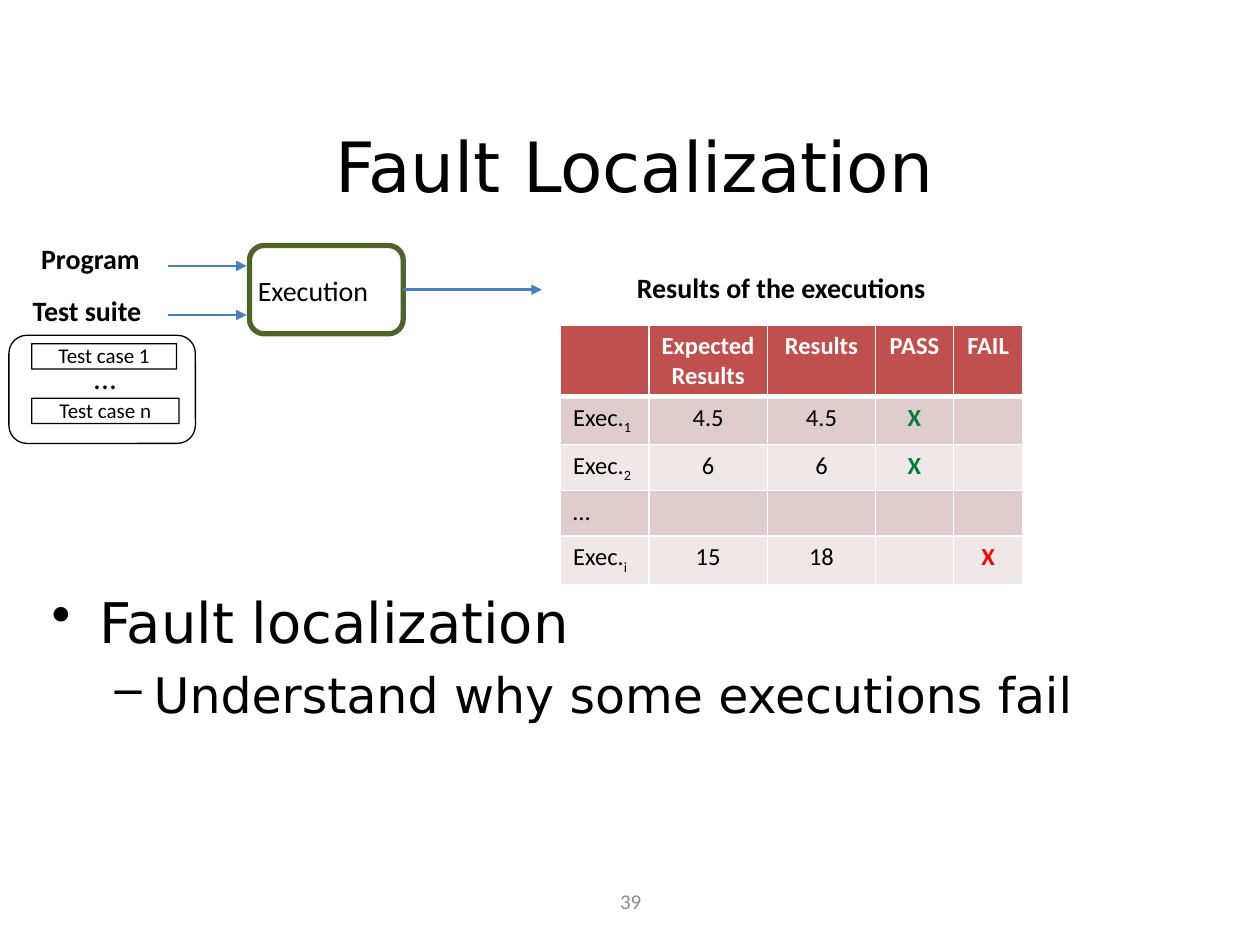
"""Build the fault localization slide."""
from dataclasses import dataclass

from lxml import etree
from pptx import Presentation
from pptx.dml.color import RGBColor
from pptx.enum.shapes import MSO_CONNECTOR, MSO_SHAPE
from pptx.enum.text import MSO_ANCHOR, PP_ALIGN
from pptx.oxml.ns import qn
from pptx.util import Cm, Pt

LEFT, CENTER = PP_ALIGN.LEFT, PP_ALIGN.CENTER
TOP, MIDDLE = MSO_ANCHOR.TOP, MSO_ANCHOR.MIDDLE
ROUNDED, STRAIGHT = MSO_SHAPE.ROUNDED_RECTANGLE, MSO_CONNECTOR.STRAIGHT
RIGHT_SIDE = 3


@dataclass(frozen=True)
class Theme:
    body_font: str = "Calibri"
    head_font: str = "DejaVu Sans"
    black: str = "000000"
    white: str = "FFFFFF"
    grey: str = "8C8C8C"
    blue: str = "4B7EBC"
    olive: str = "4F6228"
    header: str = "C0504D"
    bands: tuple = ("DFCDCE", "F0E8E8")
    passed: str = "007E39"
    failed: str = "FF0000"
    title: float = 39.6
    bullets: tuple = (32, 28)
    dots: float = 18
    label: float = 16
    cell: float = 14
    small: float = 12


class Deck:
    def __init__(self, theme):
        self.t = theme
        self.prs = Presentation()
        self.prs.slide_width, self.prs.slide_height = Cm(25.4), Cm(19.05)
        self.s = self.prs.slides.add_slide(self.prs.slide_layouts[6])

    def run(self, p, text, size, color=None, bold=False, font=None):
        r = p.add_run()
        r.text = text
        r.font.size, r.font.bold = Pt(size), bold
        r.font.name = font or self.t.body_font
        r.font.color.rgb = RGBColor.from_string(color or self.t.black)
        return r

    def text(self, box, text, size, align=LEFT, anchor=TOP, wrap=True,
             spacing=None, **style):
        sp = self.s.shapes.add_textbox(*map(Cm, box))
        tf = sp.text_frame
        tf.word_wrap, tf.vertical_anchor = wrap, anchor
        p = tf.paragraphs[0]
        p.alignment, p.line_spacing = align, spacing
        self.run(p, text, size, **style)

    def label(self, box, text, size=None, align=LEFT, bold=True):
        self.text(box, text, size or self.t.label, align, wrap=False,
                  spacing=0.98, bold=bold)

    def frame(self, box, color, width, text=None, rounding=None):
        sp = self.s.shapes.add_shape(ROUNDED, *map(Cm, box))
        sp.shadow.inherit = False
        sp.fill.background()
        sp.line.color.rgb = RGBColor.from_string(color)
        sp.line.width = Pt(width)
        if rounding is not None:
            sp.adjustments[0] = rounding
        if text:
            tf = sp.text_frame
            tf.word_wrap, tf.vertical_anchor = True, MIDDLE
            p = tf.paragraphs[0]
            p.alignment, p.line_spacing = CENTER, 0.98
            self.run(p, text, self.t.small)
        return sp

    def arrow(self, x1, x2, y, source=None):
        c = self.s.shapes.add_connector(STRAIGHT, Cm(x1), Cm(y), Cm(x2), Cm(y))
        if source is not None:
            c.begin_connect(source, RIGHT_SIDE)
        c.line.color.rgb = RGBColor.from_string(self.t.blue)
        c.line.width = Pt(1.5)
        etree.SubElement(c.line._get_or_add_ln(), qn("a:tailEnd"), type="triangle")
        etree.SubElement(c._element.spPr, qn("a:effectLst"))

    def borders(self, cell, top, bottom):
        tcPr = cell._tc.get_or_add_tcPr()
        for side, width in (("L", 1), ("R", 1), ("T", top), ("B", bottom)):
            ln = etree.SubElement(tcPr, qn(f"a:ln{side}"), w=str(Pt(width)))
            fill = etree.SubElement(ln, qn("a:solidFill"))
            etree.SubElement(fill, qn("a:srgbClr"), val=self.t.white)

    def table(self, left, top, widths, heights, rows):
        t = self.t
        frame = self.s.shapes.add_table(len(rows), len(widths), Cm(left), Cm(top),
                                        Cm(sum(widths)), Cm(sum(heights)))
        tbl = frame.table
        for col, width in zip(tbl.columns, widths):
            col.width = Cm(width)
        for i, (row, height) in enumerate(zip(rows, heights)):
            tbl.rows[i].height = Cm(height)
            for j, value in enumerate(row):
                cell = tbl.cell(i, j)
                self.borders(cell, 3 if i == 1 else 1, 3 if i == 0 else 1)
                cell.fill.solid()
                fill = t.bands[(i - 1) % 2] if i else t.header
                cell.fill.fore_color.rgb = RGBColor.from_string(fill)
                if not value:
                    cell.margin_top = cell.margin_bottom = 0
                    continue
                p = cell.text_frame.paragraphs[0]
                p.alignment = CENTER if i == 0 or j else LEFT
                color = t.white if i == 0 else t.black
                if value == "X":
                    color = t.passed if j == 3 else t.failed
                base, _, sub = value.partition("_")
                self.run(p, base, t.cell, color, i == 0 or value == "X")
                if sub:
                    r = self.run(p, sub, t.cell, color)
                    r.font._element.set("baseline", "-25000")

    def bullets(self, box, items):
        tf = self.s.shapes.add_textbox(*map(Cm, box)).text_frame
        tf.word_wrap = True
        for i, (text, mark, margin, hang) in enumerate(items):
            p = tf.add_paragraph() if i else tf.paragraphs[0]
            size = self.t.bullets[i]
            p.level, p.space_before = i, Pt(size * 0.2)
            pPr = p._p.get_or_add_pPr()
            pPr.set("marL", str(Cm(margin)))
            pPr.set("indent", str(-Cm(hang)))
            etree.SubElement(pPr, qn("a:buChar"), char=mark)
            self.run(p, text, size, font=self.t.head_font)


def main():
    t = Theme()
    d = Deck(t)
    d.text((0.79, 2.62, 24, 1.4), "Fault Localization", t.title, CENTER, MIDDLE,
           font=t.head_font)
    d.text((8.69, 17.65, 8.05, 1.02), "39", t.small, CENTER, MIDDLE, color=t.grey)

    d.label((0.58, 4.78, 2.67, 0.91), "Program")
    d.label((0.41, 5.82, 2.87, 0.91), "Test suite")
    d.frame((0.18, 6.76, 3.76, 2.18), t.black, 0.75)
    for name, top, width in (("1", 6.93, 2.92), ("n", 8.03, 2.97)):
        d.frame((0.64, top, width, 0.51), t.black, 0.75, f"Test case {name}", 0.009)
    d.label((1.63, 7.14, 1.09, 0.99), "...", t.dots, bold=False)

    execution = d.frame((5.03, 4.95, 3.1, 1.78), t.olive, 3)
    d.text((4.95, 5.38, 3.38, 0.94), "Execution", t.label)
    for y in (5.36, 6.35):
        d.arrow(3.38, 4.97, y)
    d.arrow(8.13, 10.92, 5.84, execution)

    d.label((12.04, 5.36, 7.42, 0.91), "Results of the executions", align=CENTER)
    d.table(11.3, 6.55, (1.78, 2.39, 2.18, 1.57, 1.4), (1.42, 0.97, 0.92, 0.92, 0.97), (
        ("", "Expected Results", "Results", "PASS", "FAIL"),
        ("Exec._1", "4.5", "4.5", "X", ""),
        ("Exec._2", "6", "6", "X", ""),
        ("…", "", "", "", ""),
        ("Exec._i", "15", "18", "", "X"),
    ))
    d.bullets((0.79, 11.71, 24, 4.95), (
        ("Fault localization", "•", 0.97, 0.97),
        ("Understand why some executions fail", "–", 2.06, 0.79),
    ))
    d.prs.save("out.pptx")


if __name__ == "__main__":
    main()
